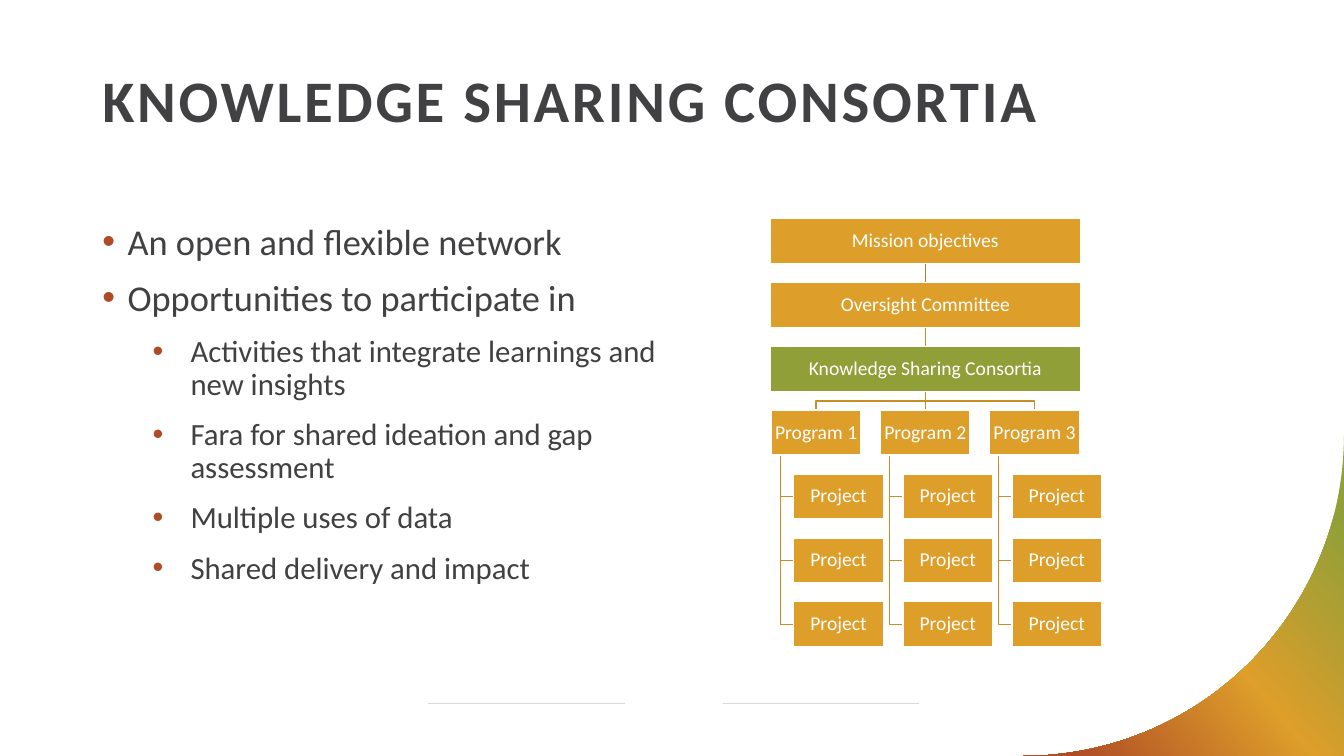
from copy import deepcopy
from math import cos, pi, sin

from lxml.etree import SubElement
from pptx import Presentation
from pptx.dml.color import RGBColor
from pptx.enum.shapes import MSO_CONNECTOR as CONN, MSO_SHAPE as SHAPE
from pptx.enum.text import MSO_ANCHOR as ANCHOR, PP_ALIGN as ALIGN
from pptx.oxml.ns import qn
from pptx.util import Pt

GREY, WHITE = "414042", "FFFFFF"
GOLD, GREEN, RUST = "DD9E2A", "919F39", "AF4C26"
BRANCH, TRUNK, RULE = "C98F26", "B17F22", "D9D8DA"


def rgb(color):
    return RGBColor.from_string(color)


class Deck:
    font = "Calibri"
    spacing = 0.9

    def __init__(self, prs):
        self.s = prs.slides.add_slide(prs.slide_layouts[6])

    def run(self, p, text, size, color, bold=False, tracking=0):
        p.line_spacing = self.spacing
        r = p.add_run()
        r.text = text
        r.font.name = self.font
        r.font.size = Pt(size)
        r.font.bold = bold
        r.font.color.rgb = rgb(color)
        if tracking:
            r._r.get_or_add_rPr().set("spc", str(tracking * 100))

    def frame(self, x, y, w, h):
        tf = self.s.shapes.add_textbox(Pt(x), Pt(y), Pt(w), Pt(h)).text_frame
        tf.word_wrap = True
        return tf

    def title(self, text, x, y, w, h):
        tf = self.frame(x, y, w, h)
        self.run(tf.paragraphs[0], text, 42, GREY, bold=True, tracking=2)

    def bullets(self, items, x, y, w, h):
        tf = self.frame(x, y, w, h)
        for i, (level, text) in enumerate(items):
            p = tf.add_paragraph() if i else tf.paragraphs[0]
            size, left, hang = ((26, 18, 18), (22, 63, 27))[level]
            pPr = p._p.get_or_add_pPr()
            pPr.set("marL", str(Pt(left)))
            pPr.set("indent", str(-Pt(hang)))
            SubElement(SubElement(pPr, qn("a:buClr")), qn("a:srgbClr")).set("val", RUST)
            SubElement(pPr, qn("a:buFont")).set("typeface", "Arial")
            SubElement(pPr, qn("a:buChar")).set("char", "•")
            p.level = level
            p.space_after = Pt(12)
            self.run(p, text, size, GREY)

    def box(self, text, x, y, w, h, fill=GOLD):
        sp = self.s.shapes.add_shape(SHAPE.RECTANGLE, Pt(x), Pt(y), Pt(w), Pt(h))
        sp.shadow.inherit = False
        sp.fill.solid()
        sp.fill.fore_color.rgb = rgb(fill)
        sp.line.color.rgb = rgb(WHITE)
        sp.line.width = Pt(1)
        tf = sp.text_frame
        tf.word_wrap = True
        tf.vertical_anchor = ANCHOR.MIDDLE
        tf.margin_left = tf.margin_right = tf.margin_top = tf.margin_bottom = Pt(0.7)
        p = tf.paragraphs[0]
        p.alignment = ALIGN.CENTER
        self.run(p, text, 14, WHITE)

    def line(self, x1, y1, x2, y2, color, width=1):
        c = self.s.shapes.add_connector(CONN.STRAIGHT, Pt(x1), Pt(y1), Pt(x2), Pt(y2))
        c.line.color.rgb = rgb(color)
        c.line.width = Pt(width)
        SubElement(c._element.spPr, qn("a:effectLst"))

    def outline(self, points, close):
        points = [(Pt(x), Pt(y)) for x, y in points]
        fb = self.s.shapes.build_freeform(*points[0], scale=1.0)
        fb.add_line_segments(points[1:], close=close)
        sp = fb.convert_to_shape()
        sp.shadow.inherit = False
        return sp

    def elbow(self, *points):
        sp = self.outline(points, close=False)
        sp.fill.background()
        sp.line.color.rgb = rgb(BRANCH)
        sp.line.width = Pt(1)

    def corner(self, cx, cy, radius, stops):
        right, bottom = cx + radius, cy + radius
        arc = [(cx + radius * cos(pi * i / 120), cy + radius * sin(pi * i / 120))
               for i in range(61)]
        sp = self.outline(arc + [(cx - 4.5, bottom), (right, bottom)], close=True)
        sp.line.fill.background()
        sp.fill.gradient()
        sp.fill.gradient_angle = 220
        gs = sp._element.spPr.find(".//" + qn("a:gs"))
        gs.addnext(deepcopy(gs))
        for stop, (position, color) in zip(sp.fill.gradient_stops, stops):
            stop.position = position
            stop.color.rgb = rgb(color)


def main():
    prs = Presentation()
    prs.slide_width, prs.slide_height = Pt(960), Pt(540)
    d = Deck(prs)

    for x in (306, 516.3):
        d.line(x, 502.5, x + 140.4, 502.5, RULE, 0.5)
    d.corner(731, 311, 229, [(0.12, GREEN), (0.5, GOLD), (0.91, RUST)])

    d.title("KNOWLEDGE SHARING CONSORTIA", 66, 47.5, 828, 64)
    d.bullets([
        (0, "An open and flexible network"),
        (0, "Opportunities to participate in"),
        (1, "Activities that integrate learnings and new insights"),
        (1, "Fara for shared ideation and gap assessment"),
        (1, "Multiple uses of data"),
        (1, "Shared delivery and impact"),
    ], 66, 156.2, 435.6, 306)

    wide, narrow, height = 221.8, 64, 32.2
    left, mid = 550.1, 661
    rows = [156.2 + 45.6 * i for i in range(7)]
    columns = [mid - narrow / 2 + 78 * i for i in (-1, 0, 1)]
    indent, stem = 16, 6.4
    program_top, project_tops = rows[3], rows[4:]

    d.line(mid, rows[0] + height, mid, rows[1], TRUNK)
    d.line(mid, rows[1] + height, mid, rows[2], BRANCH)
    fork_top = rows[2] + height
    fork_mid = (fork_top + program_top) / 2
    for x in columns:
        center = x + narrow / 2
        if center == mid:
            d.line(mid, fork_top, mid, program_top, BRANCH)
        else:
            d.elbow((mid, fork_top), (mid, fork_mid),
                    (center, fork_mid), (center, program_top))
        for y in project_tops:
            d.elbow((x + stem, program_top + height), (x + stem, y + height / 2),
                    (x + indent, y + height / 2))

    heads = [("Mission objectives", GOLD), ("Oversight Committee", GOLD),
             ("Knowledge Sharing Consortia", GREEN)]
    for y, (text, fill) in zip(rows, heads):
        d.box(text, left, y, wide, height, fill)
    for n, x in enumerate(columns, 1):
        d.box(f"Program {n}", x, program_top, narrow, height)
        for y in project_tops:
            d.box("Project", x + indent, y, narrow, height)

    prs.save("out.pptx")


if __name__ == "__main__":
    main()
